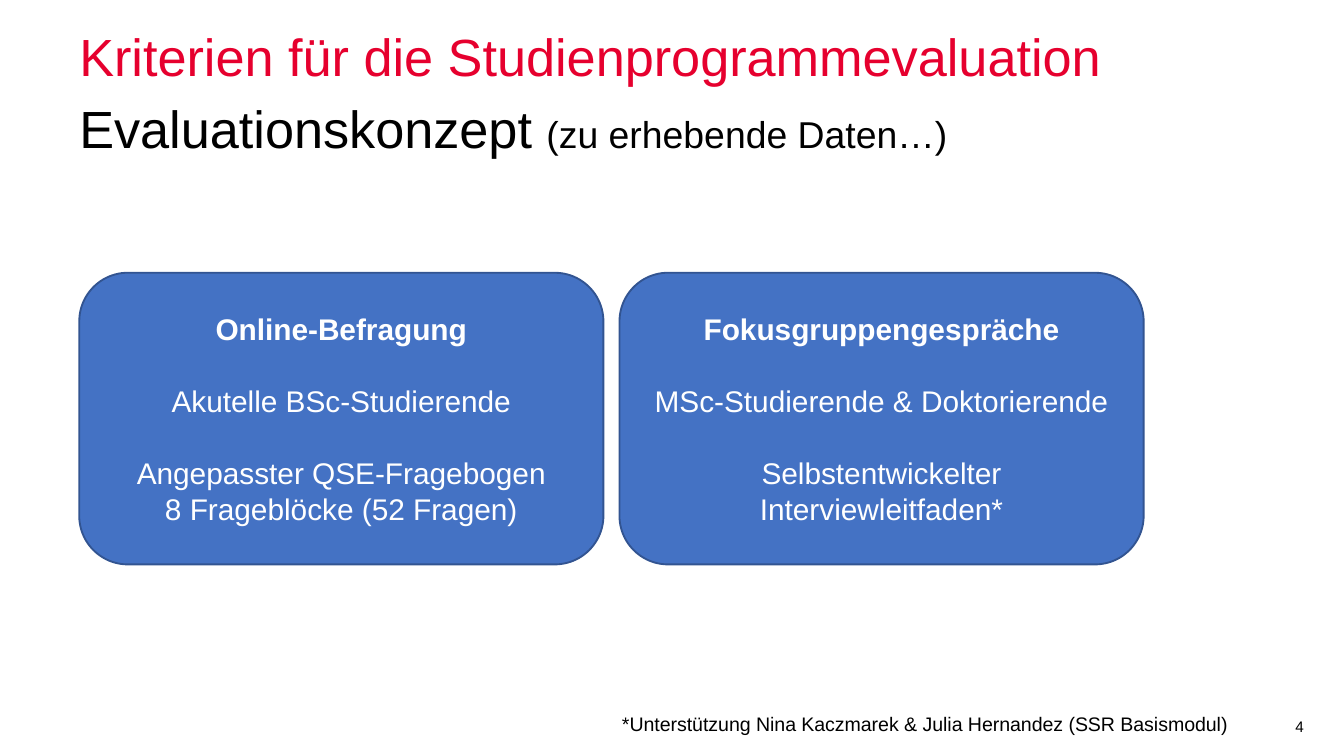
from lxml.etree import SubElement
from pptx import Presentation
from pptx.dml.color import RGBColor
from pptx.enum.shapes import MSO_SHAPE as Kind
from pptx.enum.text import MSO_ANCHOR as Anchor, MSO_AUTO_SIZE as Fit, PP_ALIGN as Align
from pptx.oxml.ns import qn
from pptx.util import Inches, Pt


def tint(color, code):
    color.rgb = RGBColor.from_string(code)


def style(font, size, code="000000", bold=False):
    font.name = "Arial"
    font.size = Pt(size)
    font.bold = bold
    tint(font.color, code)


def place(shape, box):
    shape.left, shape.top, shape.width, shape.height = map(Inches, box)


def head(shape, box, parts, code, anchor):
    place(shape, box)
    frame = shape.text_frame
    frame.margin_left = frame.margin_right = 0
    frame.margin_top = frame.margin_bottom = 0
    frame.auto_size = Fit.NONE
    frame.vertical_anchor = anchor
    para = frame.paragraphs[0]
    props = para._p.get_or_add_pPr()
    props.set("marL", "0")
    props.set("indent", "0")
    SubElement(props, qn("a:buNone"))
    para.alignment = Align.LEFT
    para.line_spacing = Pt(32)
    para.space_before = Pt(0)
    for text, size in parts:
        run = para.add_run()
        run.text = text
        style(run.font, size, code)


def card(slide, box, groups):
    shape = slide.shapes.add_shape(Kind.ROUNDED_RECTANGLE, *map(Inches, box))
    shape.shadow.inherit = False
    shape.fill.solid()
    tint(shape.fill.fore_color, "4472C4")
    tint(shape.line.color, "325491")
    shape.line.width = Pt(1)
    frame = shape.text_frame
    frame.word_wrap = True
    frame.vertical_anchor = Anchor.MIDDLE
    para = frame.paragraphs[0]
    for i, group in enumerate(groups):
        for j, text in enumerate(group):
            if i or j:
                para = frame.add_paragraph()
            para.text = text
            para.alignment = Align.CENTER
            para.space_before = Pt(19.2 if i and not j else 0)
            style(para.font, 16, "FFFFFF", bold=i == 0)


def note(slide, box, text, size):
    frame = slide.shapes.add_textbox(*map(Inches, box)).text_frame
    frame.word_wrap = False
    para = frame.paragraphs[0]
    para.text = text
    style(para.font, size)


def main():
    deck = Presentation()
    deck.slide_width = Inches(10)
    deck.slide_height = deck.slide_width * 9 // 16
    slide = deck.slides.add_slide(deck.slide_layouts[1])
    left, wide, gap = 0.59, 3.9, 0.12
    head(slide.shapes.title, (left, 0.2, 7.68, 0.45),
         [("Kriterien für die Studienprogrammevaluation", 28)],
         "E6002E", Anchor.BOTTOM)
    head(slide.placeholders[1], (left, 0.74, 7.68, 0.45),
         [("Evaluationskonzept ", 28), ("(zu erhebende Daten…)", 20)],
         "000000", Anchor.TOP)
    cards = [
        [["Online-Befragung"], ["Akutelle BSc-Studierende"],
         ["Angepasster QSE-Fragebogen", "8 Frageblöcke (52 Fragen)"]],
        [["Fokusgruppengespräche"], ["MSc-Studierende & Doktorierende"],
         ["Selbstentwickelter Interviewleitfaden*"]],
    ]
    for i, groups in enumerate(cards):
        card(slide, (left + i * (wide + gap), 2.03, wide, 2.17), groups)
    note(slide, (4.53, 5.25, 4.8, 0.28),
         "*Unterstützung Nina Kaczmarek & Julia Hernandez (SSR Basismodul)", 10.5)
    note(slide, (9.54, 5.29, 0.24, 0.18), "4", 8.2)
    deck.save("out.pptx")


if __name__ == "__main__":
    main()
